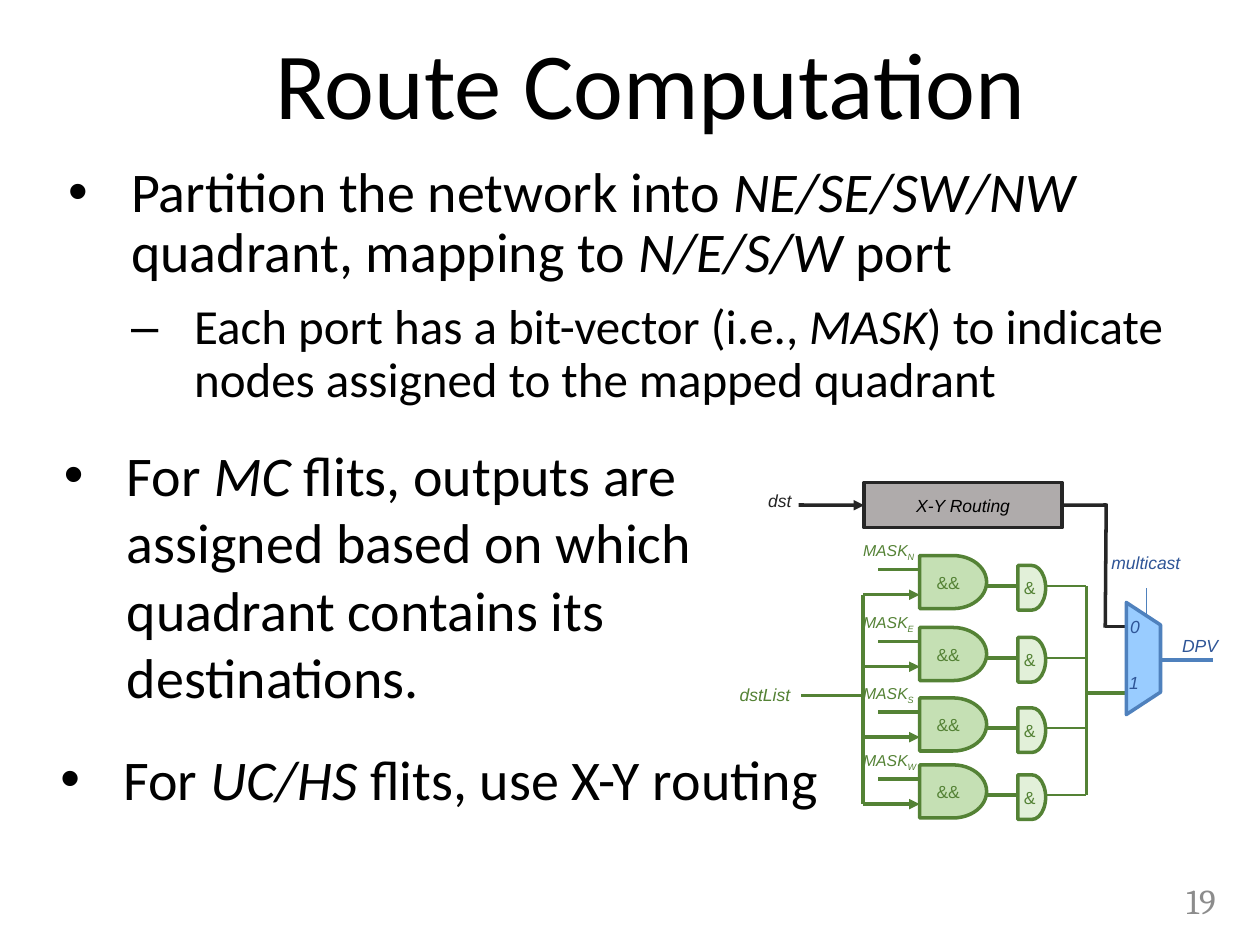
from pptx import Presentation
from pptx.dml.color import RGBColor as Rgb
from pptx.enum.shapes import MSO_CONNECTOR as Conn, MSO_SHAPE as Kind
from pptx.enum.text import MSO_ANCHOR as Anchor, MSO_AUTO_SIZE as Auto, PP_ALIGN as Align
from pptx.oxml.ns import qn
from pptx.util import Cm, Pt
from lxml.etree import SubElement as Sub

HUES = {
    "black": "000000", "ink": "262626", "gray": "AFABAB", "page": "8C8C8C",
    "green": "548235", "leaf": "C5E0B4", "pale": "E2F0D9",
    "blue": "4F81BD", "sky": "99CCFF", "navy": "2F5597",
}
BODY = {"name": "Calibri", "size": Pt(32)}
SMALL = {"name": "Arial", "size": Pt(10)}
SLANT = {**SMALL, "italic": True}
MASK = {**SLANT, "size": Pt(9)}
TOPS = {"N": 11.2, "E": 12.65, "S": 14.07, "W": 15.42}  # gate rows, in cm
BUS_IN, GATE, AND, BUS_OUT, MUX = 17.4, 18.54, 20.52, 21.9, 22.7


def hue(name):
    return Rgb.from_string(HUES[name])


def put(shape, box):
    shape.left, shape.top, shape.width, shape.height = map(Cm, box)


def write(para, text, form, color="black"):
    """Add a run; return it."""
    run = para.add_run()
    run.text = text
    for key, value in form.items():
        setattr(run.font, key, value)
    run.font.color.rgb = hue(color)
    return run


def bullet(para, mark, left, parts, form, **space):
    """Fill a hanging bullet; every second part is italic."""
    props = para._p.get_or_add_pPr()
    props.set("marL", str(Cm(left)))
    props.set("indent", str(-Cm(1.27)))
    for key, value in space.items():
        setattr(para, key, value)
    Sub(props, qn("a:buFont"), typeface="Arial")
    Sub(props, qn("a:buChar"), char=mark)
    for i, part in enumerate(parts):
        write(para, part, {**form, "italic": i % 2 == 1})


def note(slide, box, wrap=True):
    """Add an empty text box; return its frame."""
    shape = slide.shapes.add_textbox(*map(Cm, box))
    shape.text_frame.word_wrap = wrap
    return shape.text_frame


def trim(frame):
    for side in ("left", "top", "right", "bottom"):
        setattr(frame, f"margin_{side}", 0)


def label(slide, box, text, color, form=SLANT, align=Align.CENTER):
    frame = note(slide, box, False)
    trim(frame)
    para = frame.paragraphs[0]
    para.alignment = align
    write(para, text, form, color)
    return para


def block(slide, kind, box, fill, edge, text="", form=SMALL, color="green"):
    shape = slide.shapes.add_shape(kind, *map(Cm, box))
    shape.shadow.inherit = False
    shape.fill.solid()
    shape.fill.fore_color.rgb = hue(fill)
    shape.line.color.rgb = hue(edge)
    shape.line.width = Pt(2)
    if text:
        frame = shape.text_frame
        trim(frame)
        frame.vertical_anchor = Anchor.MIDDLE
        para = frame.paragraphs[0]
        para.alignment = Align.CENTER
        write(para, text, form, color)
    return shape


def wire(slide, x1, y1, x2, y2, color="green", width=2, arrow=False):
    line = slide.shapes.add_connector(Conn.STRAIGHT, *map(Cm, (x1, y1, x2, y2)))
    line.line.color.rgb = hue(color)
    line.line.width = Pt(width)
    if arrow:
        Sub(line.line._get_or_add_ln(), qn("a:tailEnd"), type="triangle")
    Sub(line._element.spPr, qn("a:effectLst"))
    return line


def words(slide):
    title, body = slide.placeholders
    put(title, (1.47, 0.84, 23.29, 2.11))
    frame = title.text_frame
    frame.auto_size = Auto.NONE
    frame.vertical_anchor = Anchor.BOTTOM
    para = frame.paragraphs[0]
    para.alignment = Align.CENTER
    para.line_spacing = 0.9
    write(para, "Route Computation", {"name": "Calibri", "size": Pt(54)})

    put(body, (1.12, 3.18, 22.81, 5.59))
    frame = body.text_frame
    frame.auto_size = Auto.NONE
    space = {"line_spacing": 0.9, "space_before": Pt(10)}
    bullet(frame.paragraphs[0], "•", 1.27,
           ("Partition the network into ", "NE/SE/SW/NW",
            " quadrant, mapping to ", "N/E/S/W", " port"), BODY, **space)
    bullet(frame.add_paragraph(), "–", 2.54,
           ("Each port has a bit-vector (i.e., ", "MASK",
            ") to indicate nodes assigned to the mapped quadrant"),
           {**BODY, "size": Pt(28)}, level=1, **space)

    frame = note(slide, (1.04, 8.76, 15.34, 5.74))
    bullet(frame.paragraphs[0], "•", 1.27,
           ("For ", "MC ", "flits, outputs are assigned based on which "
            "quadrant contains its destinations."), BODY)
    frame = note(slide, (0.97, 14.88, 15.85, 1.63), False)
    bullet(frame.paragraphs[0], "•", 1.27,
           ("For ", "UC/HS", " flits, use X-Y routing"), BODY)

    frame = note(slide, (22.86, 17.65, 1.9, 1.02))
    frame.vertical_anchor = Anchor.MIDDLE
    para = frame.paragraphs[0]
    para.alignment = Align.RIGHT
    write(para, "19", {"name": "Cambria", "size": Pt(20)}, "page")


def unicast(slide):
    label(slide, (15.37, 9.88, 0.7, 0.91), "dst", "ink")
    box = block(slide, Kind.RECTANGLE, (17.42, 9.73, 3.99, 0.91),
                "gray", "ink", "X-Y Routing", SLANT, "black")
    wire(slide, 16.1, 10.18, 17.42, 10.18, "ink", arrow=True).end_connect(box, 1)
    wire(slide, 21.41, 10.18, 22.31, 10.18, "ink").begin_connect(box, 3)
    wire(slide, 22.3, 10.15, 22.28, 12.65, "ink")
    wire(slide, 22.28, 12.63, MUX, 12.63, "ink")


def row(slide, port, top):
    """Draw one port: mask, AND with the list, then reduce."""
    out = top + 0.61
    mask = label(slide, (BUS_IN, top - 0.29, 1.3, 0.6), "MASK", "green",
                 MASK, Align.LEFT)
    low = write(mask, port, MASK, "green")
    low.font._element.set("baseline", "-25000")
    wire(slide, 17.7, top + 0.28, GATE, top + 0.28)
    wire(slide, BUS_IN, top + 0.79, GATE, top + 0.79, arrow=True)
    block(slide, Kind.FLOWCHART_DELAY, (GATE, top, 1.35, 1.07),
          "leaf", "green", "&&")
    wire(slide, GATE + 1.33, out, AND, out)
    block(slide, Kind.FLOWCHART_DELAY, (AND, top + 0.2, 0.56, 0.9),
          "pale", "green", "&")
    wire(slide, AND + 0.56, out, BUS_OUT, out, width=1)


def multicast(slide):
    label(slide, (14.77, 13.79, 1.3, 0.79), "dstList", "green")
    for port, top in TOPS.items():
        row(slide, port, top)
    first, last = TOPS["N"], TOPS["W"]
    wire(slide, BUS_IN, first + 0.79, BUS_IN, last + 0.79)
    wire(slide, 16.15, 14.02, BUS_IN, 14.02)
    wire(slide, BUS_OUT, first + 0.61, BUS_OUT, last + 0.61)
    wire(slide, BUS_OUT, 13.97, MUX, 13.97)


def select(slide):
    wire(slide, 23.39, 13.31, 24.46, 13.31, "blue")
    mux = block(slide, Kind.FLOWCHART_MANUAL_OPERATION,
                (21.92, 12.93, 2.26, 0.69), "sky", "blue")
    mux.rotation = 270
    label(slide, (23.83, 12.8, 1, 0.48), "DPV", "navy", align=Align.LEFT)
    label(slide, (22.71, 13.54, 0.3, 0.69), "1", "navy")
    label(slide, (22.73, 12.42, 0.3, 0.84), "0", "navy")
    wire(slide, 23.11, 11.86, 23.11, 12.4, "blue", 1)
    label(slide, (22.2, 11.13, 1.8, 0.69), "multicast", "navy")


def main():
    deck = Presentation()
    deck.slide_width, deck.slide_height = Cm(25.4), Cm(19.05)
    slide = deck.slides.add_slide(deck.slide_layouts[1])
    for draw in (words, unicast, multicast, select):
        draw(slide)
    deck.save("out.pptx")


if __name__ == "__main__":
    main()
